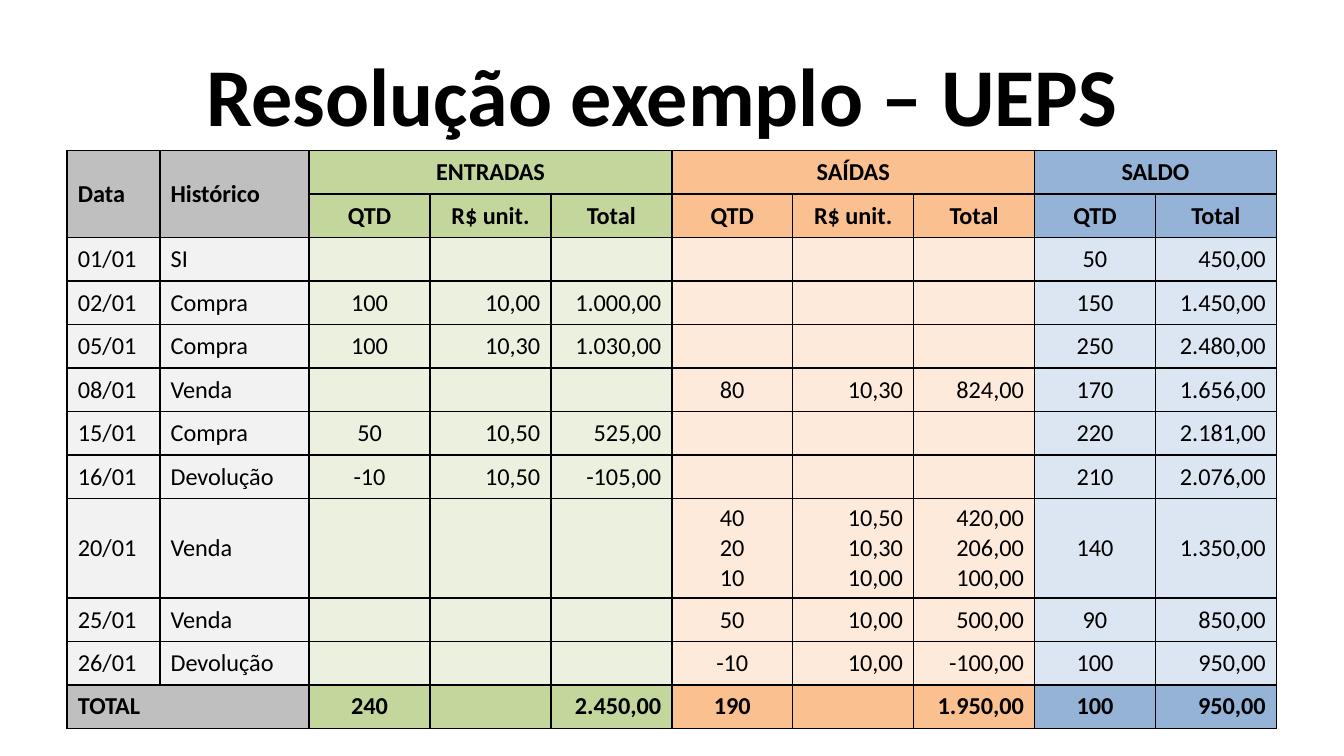
from dataclasses import dataclass

from lxml import etree
from pptx import Presentation
from pptx.dml.color import RGBColor
from pptx.enum.text import MSO_ANCHOR, PP_ALIGN
from pptx.oxml.ns import qn
from pptx.util import Inches, Pt

LEFT, CENTER, RIGHT = PP_ALIGN.LEFT, PP_ALIGN.CENTER, PP_ALIGN.RIGHT
MIDDLE = MSO_ANCHOR.MIDDLE


@dataclass(frozen=True)
class Theme:
    font: str = "Calibri"
    title_size: int = 44
    table_size: int = 13
    ink: str = "000000"
    border_width: int = 1
    # (strong, light) fills of each column group
    label: tuple = ("BFBFBF", "F2F2F2")
    entry: tuple = ("C3D69B", "EBF1DE")
    issue: tuple = ("FAC090", "FDEADA")
    balance: tuple = ("95B3D7", "DCE6F2")


THEME = Theme()

SLIDE_WIDTH = 10
SLIDE_HEIGHT = SLIDE_WIDTH * 9 / 16

TITLE = "Resolução exemplo – UEPS "
HEADER_ROWS = [
    ["Data", "Histórico", "ENTRADAS", "", "", "SAÍDAS", "", "", "SALDO", ""],
    ["", "", "QTD", "R$ unit.", "Total", "QTD", "R$ unit.", "Total", "QTD", "Total"],
]
BODY_ROWS = [
    ["01/01", "SI", "", "", "", "", "", "", "50", "450,00"],
    ["02/01", "Compra", "100", "10,00", "1.000,00", "", "", "", "150", "1.450,00"],
    ["05/01", "Compra", "100", "10,30", "1.030,00", "", "", "", "250", "2.480,00"],
    ["08/01", "Venda", "", "", "", "80", "10,30", "824,00", "170", "1.656,00"],
    ["15/01", "Compra", "50", "10,50", "525,00", "", "", "", "220", "2.181,00"],
    ["16/01", "Devolução", "-10", "10,50", "-105,00", "", "", "", "210", "2.076,00"],
    ["20/01", "Venda", "", "", "", "40\n20\n10", "10,50\n10,30\n10,00",
     "420,00\n206,00\n100,00", "140", "1.350,00"],
    ["25/01", "Venda", "", "", "", "50", "10,00", "500,00", "90", "850,00"],
    ["26/01", "Devolução", "", "", "", "-10", "10,00", "-100,00", "100", "950,00"],
]
TOTAL_ROW = ["TOTAL", "", "240", "", "2.450,00", "190", "", "1.950,00", "100", "950,00"]

COLUMN_WIDTHS = [0.69, 1.11] + [0.9] * 8
COLUMN_FILLS = ([THEME.label] * 2 + [THEME.entry] * 3
                + [THEME.issue] * 3 + [THEME.balance] * 2)
COLUMN_ALIGNS = [LEFT, LEFT, CENTER, RIGHT, RIGHT, CENTER, RIGHT, RIGHT, CENTER, RIGHT]
TALL_ROW_HEIGHT = 0.71
# First and last (row, column) of each merged block; -1 is the total row
MERGES = [((0, 0), (1, 0)), ((0, 1), (1, 1)), ((0, 2), (0, 4)),
          ((0, 5), (0, 7)), ((0, 8), (0, 9)), ((-1, 0), (-1, 1))]


def write_text(frame, text, size, bold=False, align=LEFT):
    """Write one paragraph per line of text."""
    for index, line in enumerate(text.split("\n")):
        paragraph = frame.add_paragraph() if index else frame.paragraphs[0]
        paragraph.alignment = align
        if not line:
            # An empty cell still needs the type size to keep its row low
            end = etree.SubElement(paragraph._p, qn("a:endParaRPr"))
            end.set("sz", str(size * 100))
            continue
        run = paragraph.add_run()
        run.text = line
        run.font.name = THEME.font
        run.font.size = Pt(size)
        run.font.bold = bold
        run.font.color.rgb = RGBColor.from_string(THEME.ink)


def set_insets(target):
    target.margin_left = target.margin_right = Inches(0.08)
    target.margin_top = target.margin_bottom = Inches(0.04)
    target.vertical_anchor = MIDDLE


def set_borders(cell):
    properties = cell._tc.get_or_add_tcPr()
    for side in ("a:lnL", "a:lnR", "a:lnT", "a:lnB"):
        line = etree.SubElement(properties, qn(side), w=str(Pt(THEME.border_width)))
        fill = etree.SubElement(line, qn("a:solidFill"))
        etree.SubElement(fill, qn("a:srgbClr"), val=THEME.ink)


def place_title(slide, left, top, width, height):
    title = slide.shapes.title
    title.left, title.top = Inches(left), Inches(top)
    title.width, title.height = Inches(width), Inches(height)
    set_insets(title.text_frame)
    write_text(title.text_frame, TITLE, THEME.title_size, bold=True, align=CENTER)


def format_cell(cell, text, fill, bold, align):
    set_insets(cell)
    set_borders(cell)
    cell.fill.solid()
    cell.fill.fore_color.rgb = RGBColor.from_string(fill)
    write_text(cell.text_frame, text, THEME.table_size, bold=bold, align=align)


def place_stock_table(slide, left, top, width, height):
    rows = HEADER_ROWS + BODY_ROWS + [TOTAL_ROW]
    last = len(rows) - 1
    table = slide.shapes.add_table(
        len(rows), len(COLUMN_WIDTHS),
        Inches(left), Inches(top), Inches(width), Inches(height)).table
    table.first_row = table.horz_banding = False

    # Column widths are shares of the box; plain rows share what the tall one leaves
    scale = width / sum(COLUMN_WIDTHS)
    for column, column_width in zip(table.columns, COLUMN_WIDTHS):
        column.width = Inches(column_width * scale)
    row_height = (height - TALL_ROW_HEIGHT) / last

    for row_index, values in enumerate(rows):
        is_header = row_index < len(HEADER_ROWS)
        strong = is_header or row_index == last
        tall = any("\n" in value for value in values)
        table.rows[row_index].height = Inches(TALL_ROW_HEIGHT if tall else row_height)
        for column_index, text in enumerate(values):
            centered = is_header and column_index > 1
            format_cell(
                table.cell(row_index, column_index), text,
                fill=COLUMN_FILLS[column_index][0 if strong else 1],
                bold=strong,
                align=CENTER if centered else COLUMN_ALIGNS[column_index])

    # Headings and the total label span several cells
    for (first_row, first_column), (last_row, last_column) in MERGES:
        start = table.cell(first_row % len(rows), first_column)
        start.merge(table.cell(last_row % len(rows), last_column))


def main():
    presentation = Presentation()
    presentation.slide_width = Inches(SLIDE_WIDTH)
    presentation.slide_height = Inches(SLIDE_HEIGHT)
    title_only = presentation.slide_layouts[5]
    slide = presentation.slides.add_slide(title_only)
    place_title(slide, 0.5, 0.23, 9, 0.94)
    place_stock_table(slide, 0.5, 1.12, 9, 4.27)
    presentation.save("out.pptx")


if __name__ == "__main__":
    main()
